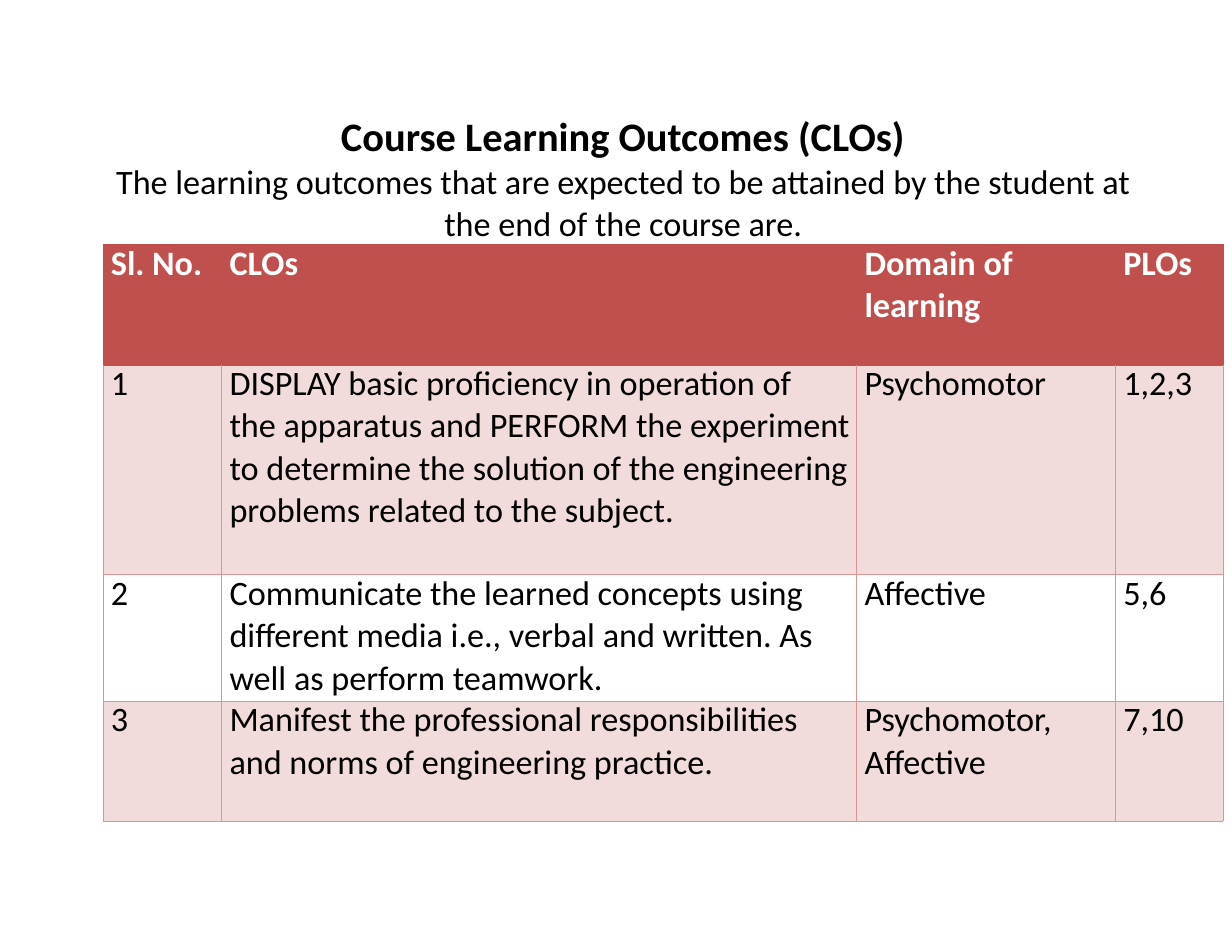
import pptx
import pptx.util
import pptx.dml.color
import pptx.enum.text
from lxml import etree
from pptx.oxml.ns import qn

Inches, Pt = pptx.util.Inches, pptx.util.Pt

TITLE = "Course Learning Outcomes (CLOs)"
INTRO = ("The learning outcomes that are expected to be attained by the "
         "student at the end of the course are.")

# Each cell is a list of paragraphs.
ROWS = [
    [["Sl. No."], ["CLOs"], ["Domain of", "learning"], ["PLOs"]],
    [["1"],
     ["DISPLAY basic proficiency in operation of",
      "the apparatus and PERFORM the experiment to determine the solution "
      "of the engineering problems related to the subject."],
     ["Psychomotor"], ["1,2,3"]],
    [["2"],
     ["Communicate the learned concepts using",
      "different media i.e., verbal and written. As well as perform "
      "teamwork."],
     ["Affective"], ["5,6"]],
    [["3"],
     ["Manifest the professional responsibilities",
      "and norms of engineering practice."],
     ["Psychomotor,", "Affective"], ["7,10"]],
]
WIDTHS = [1.06, 5.67, 2.31, 0.96]
HEIGHTS = [1.08, 1.87, 1.13, 1.07]
LEADS = [25.9, 25.4, 25.6, 25.5]  # first-line spacing of each row, points
LEFT, TOP = 0.92, 2.18

RED, PINK, ROSE = "C0504D", "F1DBDB", "D99493"
FILLS = [RED, PINK, None, PINK]
HEAD = {"size": Pt(22), "bold": True, "color": "FFFFFF"}
BODY = {"size": Pt(22), "bold": False, "color": "000000"}
BIG = {"size": Pt(26), "bold": True, "color": "000000"}


def rgb(code):
    return pptx.dml.color.RGBColor.from_string(code)


def put(obj, **values):
    for key, value in values.items():
        setattr(obj, key, value)


def add_run(para, text, look):
    run = para.add_run()
    run.text = text
    put(run.font, name="Calibri", size=look["size"], bold=look["bold"])
    run.font.color.rgb = rgb(look["color"])


def edge(cell, tints):
    """Draw the left, right, top and bottom borders in the given colours."""
    props = cell._tc.get_or_add_tcPr()
    for spot, (side, tint) in enumerate(zip("LRTB", tints)):
        line = etree.Element(qn("a:ln" + side), w=str(Pt(0.5)))
        fill = etree.SubElement(line, qn("a:solidFill"))
        etree.SubElement(fill, qn("a:srgbClr"), val=tint)
        props.insert(spot, line)


def add_title(slide):
    title = slide.shapes.title
    put(title, left=Inches(0.99), top=Inches(0.97),
        width=Inches(9.15), height=Inches(1.21))
    frame = title.text_frame
    put(frame, margin_left=0, margin_right=0, margin_top=Inches(0.01),
        margin_bottom=0, word_wrap=True,
        auto_size=pptx.enum.text.MSO_AUTO_SIZE.NONE,
        vertical_anchor=pptx.enum.text.MSO_ANCHOR.TOP)
    para = frame.paragraphs[0]
    put(para, alignment=pptx.enum.text.PP_ALIGN.CENTER,
        line_spacing=1.02, space_before=Pt(0.2))
    add_run(para, TITLE, BIG)
    para.add_line_break()
    add_run(para, INTRO, BODY)


def fill_cell(cell, texts, row):
    put(cell, margin_left=Inches(0.07), margin_right=0,
        margin_top=0, margin_bottom=0)
    if FILLS[row]:
        cell.fill.solid()
        cell.fill.fore_color.rgb = rgb(FILLS[row])
    else:
        cell.fill.background()
    side = ROSE if row else RED
    edge(cell, [side, side, ROSE if row > 1 else RED, side])
    for num, text in enumerate(texts):
        frame = cell.text_frame
        para = frame.add_paragraph() if num else frame.paragraphs[0]
        para.line_spacing = 1.02 if num else Pt(LEADS[row])
        add_run(para, text, BODY if row else HEAD)


def add_grid(slide):
    table = slide.shapes.add_table(
        len(ROWS), len(WIDTHS), Inches(LEFT), Inches(TOP),
        Inches(sum(WIDTHS)), Inches(sum(HEIGHTS))).table
    table.horz_banding = False
    for col, width in zip(table.columns, WIDTHS):
        col.width = Inches(width)
    for row, cells in enumerate(ROWS):
        table.rows[row].height = Inches(HEIGHTS[row])
        for col, texts in enumerate(cells):
            fill_cell(table.cell(row, col), texts, row)


def main():
    deck = pptx.Presentation()
    put(deck, slide_width=Inches(11), slide_height=Inches(8.5))
    slide = deck.slides.add_slide(deck.slide_layouts[5])
    add_title(slide)
    add_grid(slide)
    deck.save("out.pptx")


if __name__ == "__main__":
    main()
